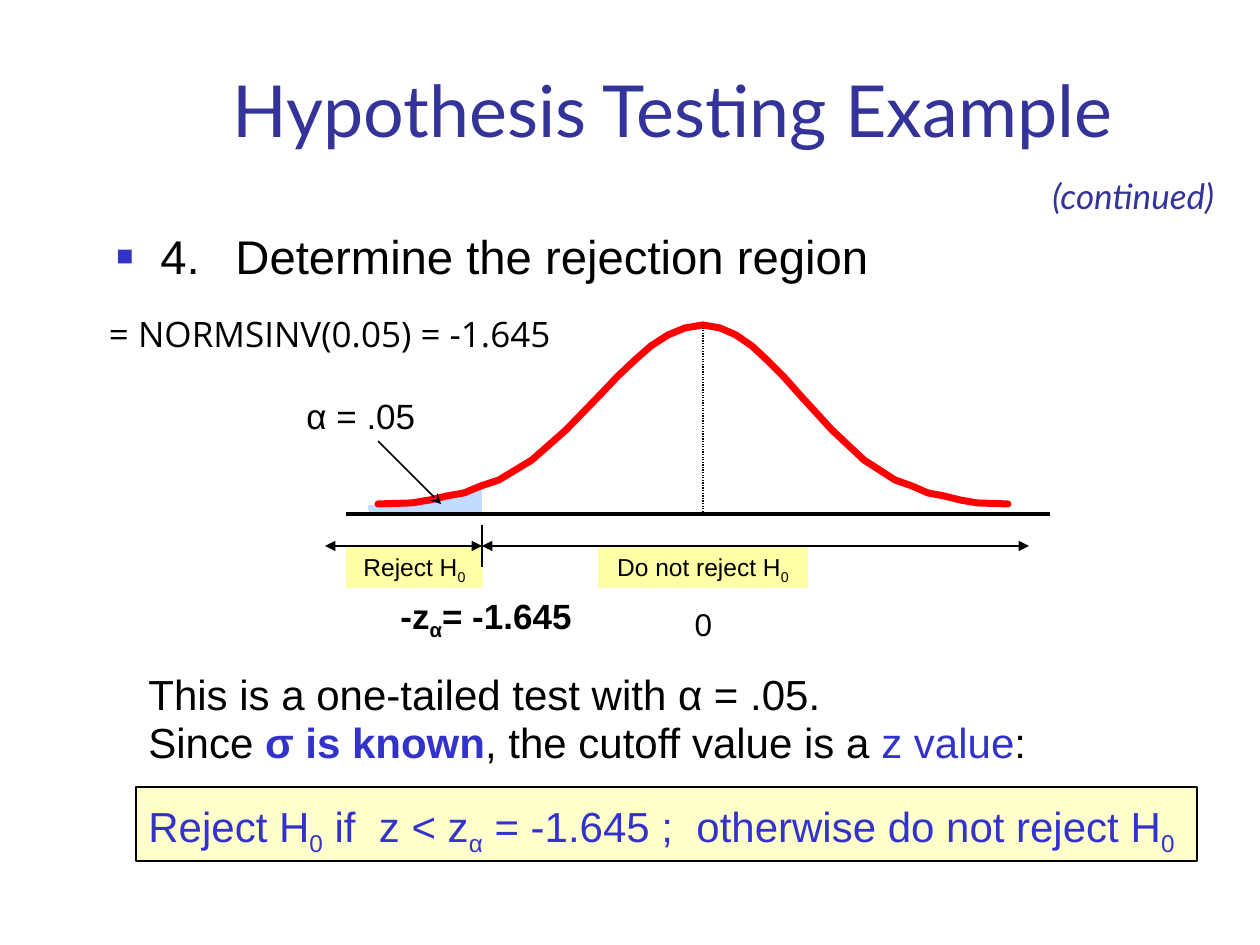
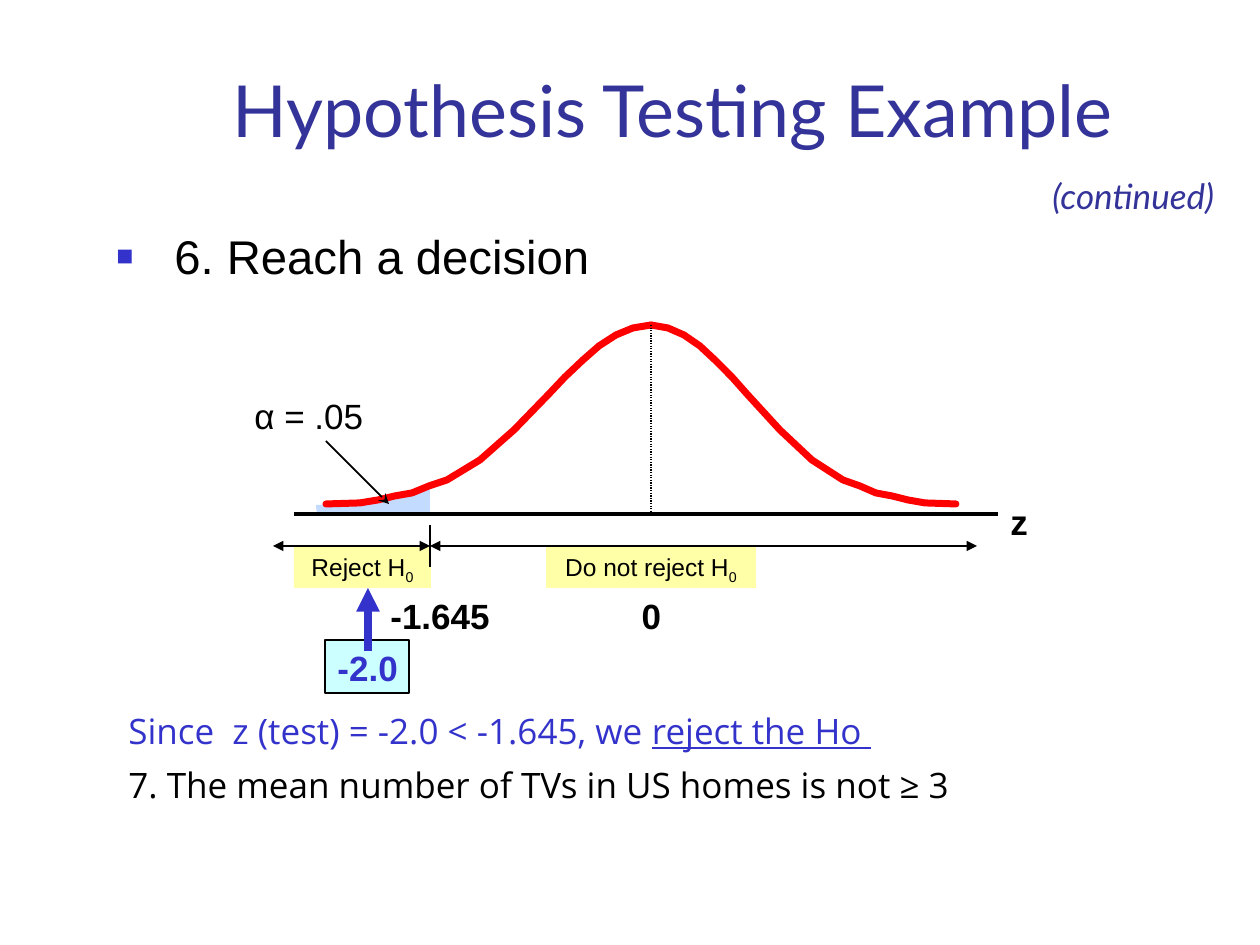
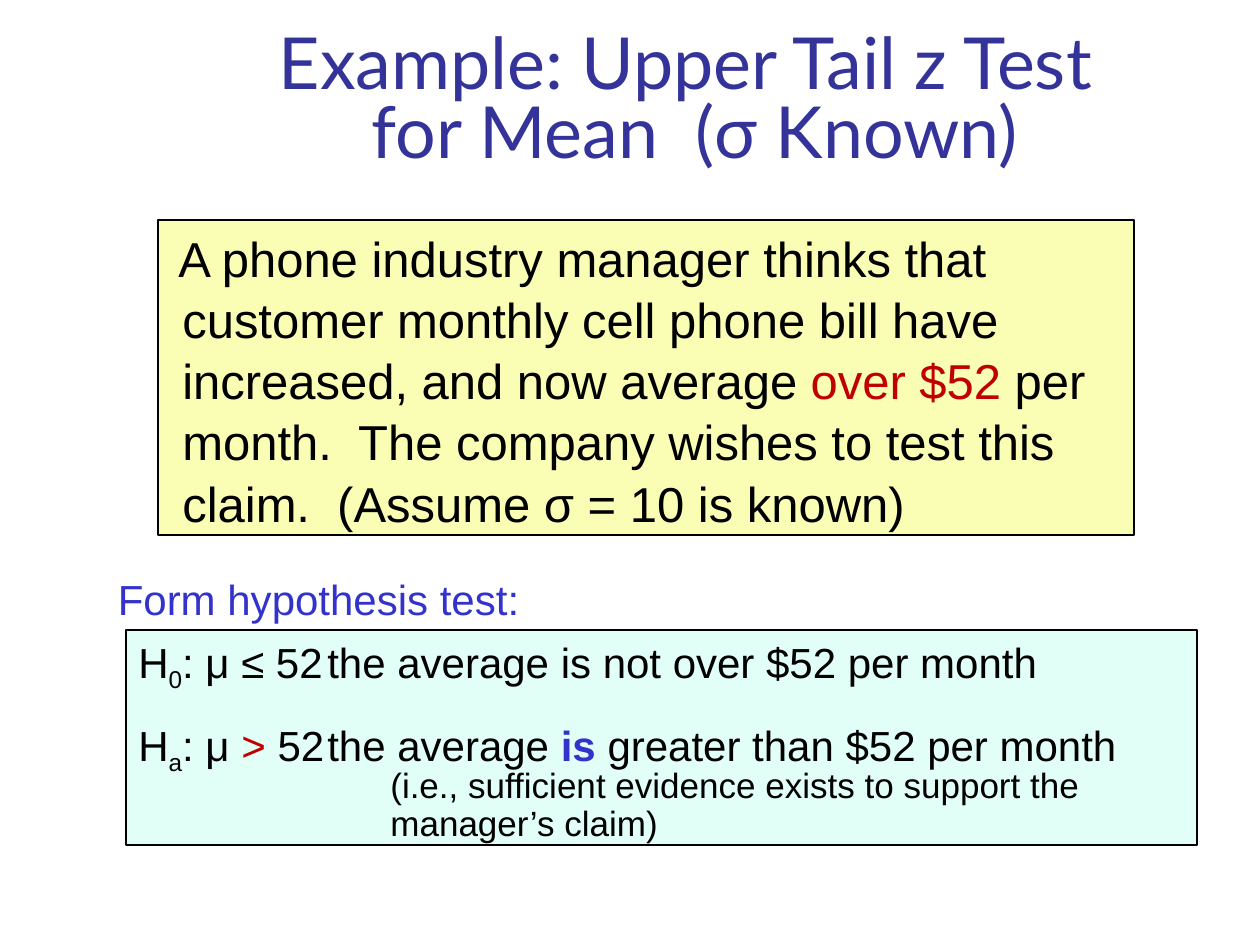
from lxml import etree
from pptx import Presentation
from pptx.dml.color import RGBColor
from pptx.enum.dml import MSO_LINE
from pptx.enum.shapes import MSO_CONNECTOR, MSO_SHAPE
from pptx.enum.text import MSO_ANCHOR, MSO_AUTO_SIZE, PP_ALIGN
from pptx.oxml.ns import qn
from pptx.util import Emu, Pt

PX = 914400 / 126
LEFT, CENTER = PP_ALIGN.LEFT, PP_ALIGN.CENTER
TOP, BOTTOM = MSO_ANCHOR.TOP, MSO_ANCHOR.BOTTOM
NO_AUTOFIT = MSO_AUTO_SIZE.NONE
STRAIGHT, RECT = MSO_CONNECTOR.STRAIGHT, MSO_SHAPE.RECTANGLE
DOTTED = MSO_LINE.ROUND_DOT
TITLE_ONLY = 5

COLORS = {
    "black": "000000", "title": "333399", "accent": "3333CC", "dark_red": "C00000",
    "curve": "FF0000", "tail": "C3DBFF", "label": "FFFFA7", "rule": "FFFFCC",
    "statistic": "CCFFFF", "claim": "FAFEB4", "hypotheses": "E1FFF7",
}
SUB = {"baseline": -25000}
BLUE = {"color": "accent"}
RED = {"color": "dark_red"}
BOLD_BLUE = {"color": "accent", "bold": True}

CURVE = [(-325, 504), (-291, 503), (-273, 500), (-256, 496), (-239, 493), (-222, 486),
         (-204, 480), (-171, 460), (-137, 430), (-102, 394), (-86, 377), (-68, 360),
         (-52, 346), (-35, 335), (-18, 328), (0, 325)]
RIGHT_RATIO = 0.94
TAIL = [(-334, 514), (-335, 505), (-285, 503), (-252, 494), (-236, 491), (-221, 483),
        (-221, 514)]


def px(n):
    """Turn px into EMU."""
    return Emu(round(n * PX))


def rgb(name):
    """Look up a named colour."""
    return RGBColor.from_string(COLORS[name])


def add_run(p, text, size=20, font="Arial", color="black", bold=False, italic=False,
            underline=False, baseline=0):
    """Add one formatted run to a paragraph."""
    r = p.add_run()
    r.text = text
    f = r.font
    f.size, f.name, f.bold, f.italic, f.underline = Pt(size), font, bold, italic, underline
    f.color.rgb = rgb(color)
    if baseline:
        r._r.get_or_add_rPr().set("baseline", str(baseline))


def format_paragraph(p, align=LEFT, spacing=1.0, before=0, margin=0, indent=0,
                     bullet=False, tab=None):
    """Set the alignment, spacing, indents, bullet and tab stop of a paragraph."""
    p.alignment, p.line_spacing, p.space_before = align, spacing, Pt(before)
    pPr = p._p.get_or_add_pPr()
    pPr.set("marL", str(px(margin)))
    pPr.set("indent", str(px(indent)))
    if bullet:
        clr = etree.SubElement(pPr, qn("a:buClr"))
        etree.SubElement(clr, qn("a:srgbClr"), val=COLORS["accent"])
        etree.SubElement(pPr, qn("a:buSzPct"), val="60000")
        etree.SubElement(pPr, qn("a:buFont"), typeface="Arial")
        etree.SubElement(pPr, qn("a:buChar"), char="■")
    if tab:
        tabs = etree.SubElement(pPr, qn("a:tabLst"))
        etree.SubElement(tabs, qn("a:tab"), pos=str(px(tab)), algn="l")


def fill_text(tf, paragraphs, wrap=True, anchor=TOP, **fmt):
    """Fill a frame with (runs, paragraph format) pairs; a run is (text, format)."""
    tf.word_wrap, tf.auto_size, tf.vertical_anchor = wrap, NO_AUTOFIT, anchor
    for i, (runs, layout) in enumerate(paragraphs):
        p = tf.paragraphs[0] if i == 0 else tf.add_paragraph()
        format_paragraph(p, **layout)
        for text, extra in runs:
            add_run(p, text, **{**fmt, **extra})


def add_text(slide, box, paragraphs, **fmt):
    """Add a text box."""
    sp = slide.shapes.add_textbox(*map(px, box))
    fill_text(sp.text_frame, paragraphs, **fmt)


def add_label(slide, box, text, align=LEFT, **fmt):
    """Add a text box that holds one plain run."""
    add_text(slide, box, [([(text, {})], {"align": align})], **fmt)


def add_box(slide, box, fill, line=None):
    """Add a filled rectangle, outlined when a line width is given."""
    sp = slide.shapes.add_shape(RECT, *map(px, box))
    sp.shadow.inherit = False
    sp.fill.solid()
    sp.fill.fore_color.rgb = rgb(fill)
    if line:
        sp.line.color.rgb = rgb("black")
        sp.line.width = Pt(line)
    else:
        sp.line.fill.background()
    return sp


def add_line(slide, x1, y1, x2, y2, width=1.5, color="black", dash=None, head=None, tail=None):
    """Add a straight line with optional arrowheads."""
    c = slide.shapes.add_connector(STRAIGHT, px(x1), px(y1), px(x2), px(y2))
    c.line.color.rgb = rgb(color)
    c.line.width = Pt(width)
    if dash:
        c.line.dash_style = dash
    spPr = c._element.spPr
    for tag, kind in (("a:headEnd", head), ("a:tailEnd", tail)):
        if kind:
            etree.SubElement(spPr.find(qn("a:ln")), qn(tag), type=kind)
    etree.SubElement(spPr, qn("a:effectLst"))


def add_outline(slide, points, close=False):
    """Add a freeform through the given points."""
    builder = slide.shapes.build_freeform(*points[0], scale=PX)
    builder.add_line_segments(points[1:], close=close)
    sp = builder.convert_to_shape()
    sp.shadow.inherit = False
    return sp


def add_half_curve(slide, peak, ratio):
    """Draw half of the bell curve; the ratio stretches or mirrors it."""
    sp = add_outline(slide, [(round(peak + x * ratio), y) for x, y in CURVE])
    sp.fill.background()
    sp.line.color.rgb = rgb("curve")
    sp.line.width = Pt(4)
    sp._element.spPr.find(qn("a:ln")).set("cap", "rnd")


def add_region_label(slide, box, text):
    """Add a yellow label that ends in H with a subscript 0."""
    sp = add_box(slide, box, "label")
    fill_text(sp.text_frame, [([(text, {}), ("0", SUB)], {"align": CENTER})], size=14)


def add_rejection_diagram(slide, peak):
    """Draw the bell curve with its lower-tail rejection region."""
    cutoff = peak - 221
    add_region_label(slide, (peak - 357, 546, 137, 42), "Reject H")
    add_region_label(slide, (peak - 105, 546, 210, 42), "Do not reject H")
    sp = add_outline(slide, [(peak + x, y) for x, y in TAIL], close=True)
    sp.fill.solid()
    sp.fill.fore_color.rgb = rgb("tail")
    sp.line.fill.background()
    for ratio in (1, -RIGHT_RATIO):
        add_half_curve(slide, peak, ratio)
    add_line(slide, peak - 357, 514, peak + 347, 514, width=2)
    add_line(slide, peak - 325, 441, peak - 262, 504, width=1, tail="stealth")
    add_label(slide, (peak - 409, 388, 179, 54), "α = .05")
    add_line(slide, peak, 325, peak, 514, width=0.75, dash=DOTTED)
    add_line(slide, cutoff, 525, cutoff, 567)
    for end in (peak + 326, peak - 378):
        add_line(slide, cutoff, 546, end, 546, head="triangle", tail="triangle")


def add_title_slide(prs, title, box, spacing=1.0):
    """Add a slide and format its title."""
    slide = prs.slides.add_slide(prs.slide_layouts[TITLE_ONLY])
    sp = slide.shapes.title
    sp.left, sp.top, sp.width, sp.height = map(px, box)
    fill_text(sp.text_frame, [([], {"align": CENTER, "spacing": spacing})], anchor=BOTTOM)
    p = sp.text_frame.paragraphs[0]
    for i, line in enumerate(title):
        if i:
            p.add_line_break()
        add_run(p, line, size=41, font="Lato", color="title")
    return slide


def add_step_slide(prs, step, peak, **layout):
    """Add a continued example slide with a bulleted step and the diagram."""
    slide = add_title_slide(prs, ["Hypothesis Testing Example"], (136, 53, 1074, 105))
    add_label(slide, (1040, 168, 203, 54), "(continued)", wrap=False, font="Lato",
              color="title", italic=True)
    add_text(slide, (104, 221, 1113, 84), [([(step, {})], {"bullet": True, **layout})], size=27)
    add_rejection_diagram(slide, peak)
    return slide


def add_region_slide(prs):
    """Build the slide on the rejection region."""
    slide = add_step_slide(prs, "4.\tDetermine the rejection region", 703,
                           margin=44, indent=-44, tab=119)
    add_label(slide, (78, 306, 504, 55), "= NORMSINV(0.05) = -1.645", CENTER, font="Open Sans")
    add_text(slide, (388, 588, 199, 54),
             [([("-z", {}), ("α", SUB), ("= -1.645", {})], {})], bold=True)
    add_label(slide, (672, 599, 63, 50), "0", CENTER, size=18)
    add_box(slide, (136, 787, 1061, 74), "rule", line=1.5)
    add_text(slide, (136, 662, 1061, 194), [
        ([("This is a one-tailed test with α = .05.", {})], {}),
        ([("Since ", {}), ("σ is known", BOLD_BLUE), (", the cutoff value is a ", {}),
          ("z value", BLUE), (":", {})], {"spacing": 0.98}),
        ([("Reject H", BLUE), ("0", {**BLUE, **SUB}), (" if  z < z", BLUE),
          ("α", {**BLUE, **SUB}), (" = -1.645 ;  otherwise do not reject H", BLUE),
          ("0", {**BLUE, **SUB})], {"spacing": 1.2, "before": 12}),
    ], size=24)


def add_decision_slide(prs):
    """Build the slide on the decision."""
    slide = add_step_slide(prs, "6. Reach a decision", 651, margin=58, indent=-58)
    add_label(slide, (378, 588, 136, 54), "-1.645", bold=True)
    add_label(slide, (620, 588, 63, 54), "0", CENTER, bold=True)
    add_label(slide, (998, 494, 53, 54), "z", bold=True)
    add_box(slide, (325, 640, 84, 53), "statistic", line=0.75)
    add_label(slide, (325, 640, 95, 54), "-2.0", **BOLD_BLUE)
    add_line(slide, 368, 651, 368, 588, width=4.5, color="accent", tail="triangle")
    add_text(slide, (116, 703, 1061, 118), [
        ([("Since  z (test) = -2.0 < -1.645, we ", BLUE),
          ("reject the Ho ", {**BLUE, "underline": True})], {}),
        ([("7. The mean number of TVs in US homes is not ≥ 3", {})], {"before": 7}),
    ], font="Open Sans")


def add_upper_tail_slide(prs):
    """Build the slide on the upper tail test."""
    slide = add_title_slide(prs, ["Example: Upper Tail z Test ", "for Mean  (σ Known)"],
                            (158, 32, 1074, 147), spacing=0.8)
    add_box(slide, (158, 220, 976, 315), "claim", line=1.5)
    add_text(slide, (126, 220, 1061, 315), [
        ([("A phone industry manager thinks that customer monthly cell phone bill have "
           "increased, and now average ", {}), ("over $52", RED),
          (" per month.  The company wishes to test this claim.  (Assume σ = 10 is known)", {})],
         {"margin": 44, "indent": -4, "spacing": 1.04}),
    ], size=28)
    add_label(slide, (105, 567, 427, 63), "Form hypothesis test:", CENTER, wrap=False,
              size=24, color="accent")
    sp = add_box(slide, (126, 630, 1071, 215), "hypotheses", line=0.75)
    fill_text(sp.text_frame, [
        ([("H", {}), ("0", SUB), (": μ ≤ 52\tthe average is not over $52 per month", {})],
         {"tab": 243}),
        ([("H", {}), ("a", SUB), (": μ ", {}), (">", RED), (" 52\tthe average ", {}),
          ("is", BOLD_BLUE), (" greater than $52 per month", {})],
         {"tab": 243, "spacing": 0.9, "before": 15}),
        ([("(i.e., sufficient evidence exists to support the", {"size": 20})],
         {"margin": 252, "spacing": 0.8}),
        ([("manager’s claim)", {"size": 20})], {"margin": 252, "spacing": 0.95}),
    ], size=24)


def main():
    """Build and save the presentation."""
    prs = Presentation()
    prs.slide_width, prs.slide_height = px(1260), px(945)
    add_region_slide(prs)
    add_decision_slide(prs)
    add_upper_tail_slide(prs)
    prs.save("out.pptx")


if __name__ == "__main__":
    main()
